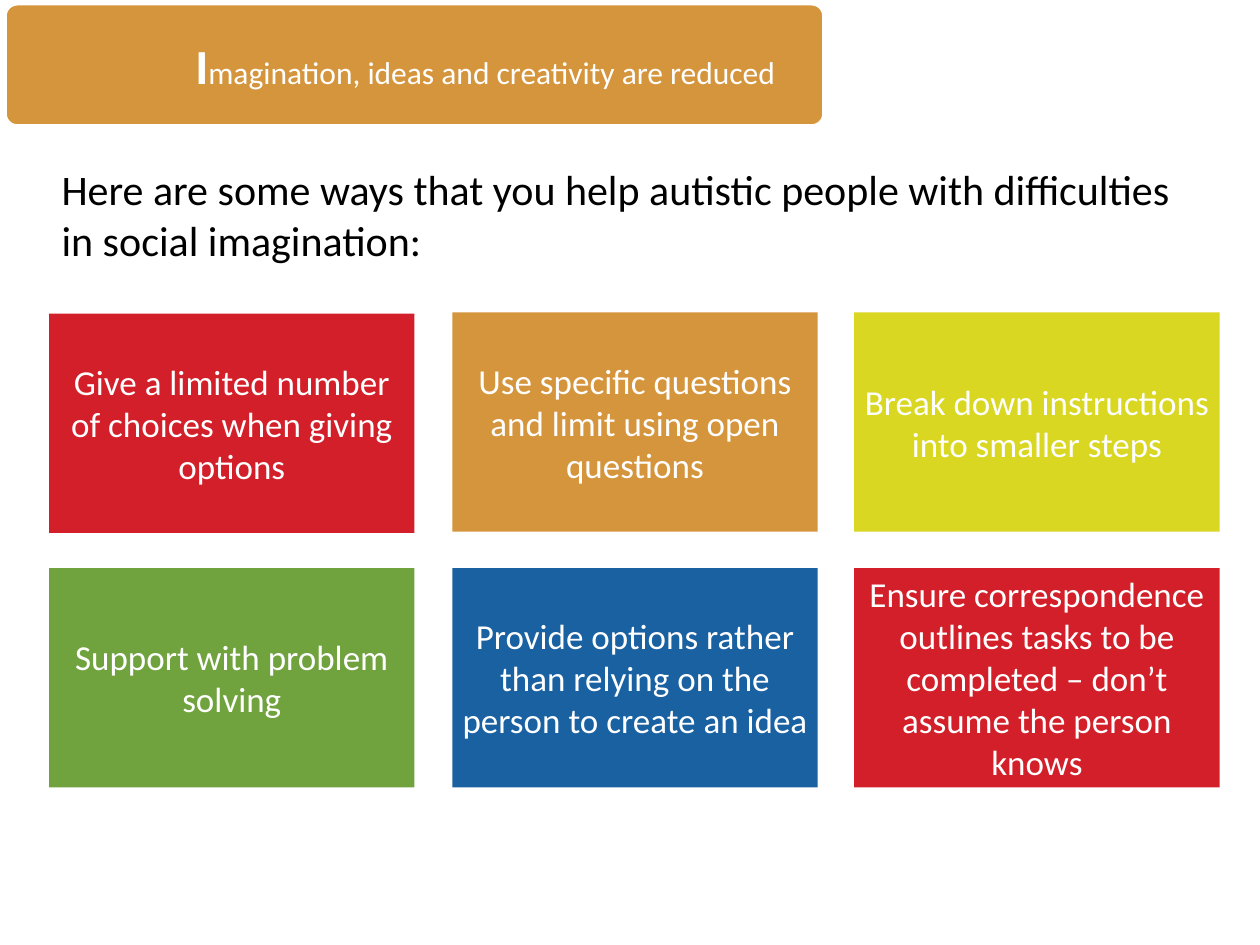
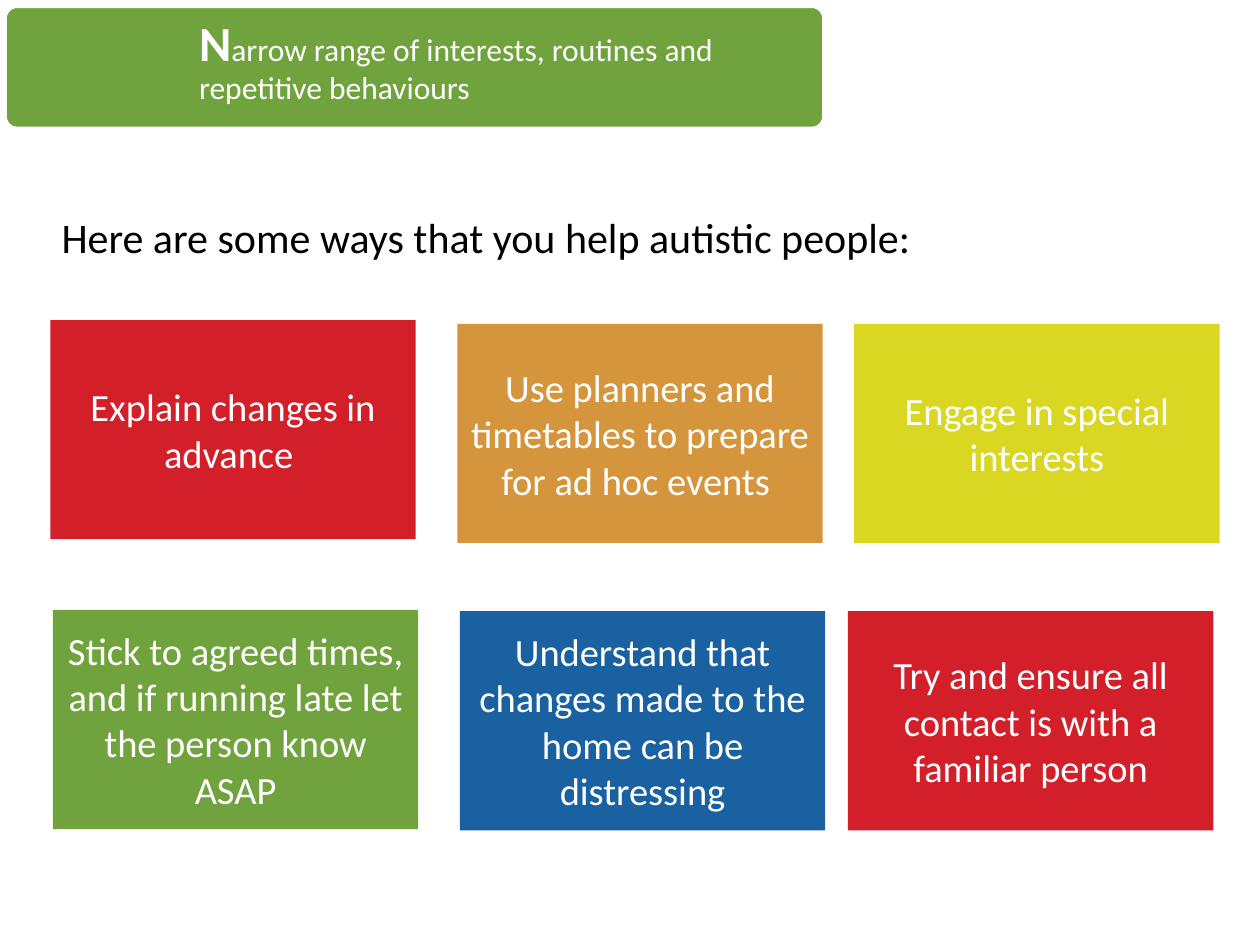
from dataclasses import dataclass

from pptx import Presentation
from pptx.dml.color import RGBColor
from pptx.enum.shapes import MSO_SHAPE as Shape
from pptx.enum.text import MSO_ANCHOR as Anchor, MSO_AUTO_SIZE as AutoSize, PP_ALIGN as Align
from pptx.util import Inches, Pt


@dataclass(frozen=True)
class Theme:
    font: str = "Calibri"
    red: str = "D31F29"
    orange: str = "D5953C"
    yellow: str = "D9D721"
    green: str = "70A33E"
    blue: str = "1A61A2"
    white: str = "FFFFFF"
    black: str = "000000"
    initial_size: int = 28
    title_size: int = 18
    intro_size: int = 24


THEME = Theme()
TILE_COLOURS = (THEME.red, THEME.orange, THEME.yellow,
                THEME.green, THEME.blue, THEME.red)
TILE_SIZE = (2.9, 1.74)
BAND_LEFT, BAND_SIZE = 0.04, (6.5, 0.97)

# Boxes are (left, top, width, height) in inches; tiles are (left, top, text).
SLIDES = [
    {
        "title": "Imagination, ideas and creativity are reduced",
        "title_box": (1.43, 0.03, 5.1, 0.97),
        "title_spacing": 1.0,
        "band_colour": THEME.orange,
        "intro": "Here are some ways that you help autistic people "
                 "with difficulties in social imagination:",
        "intro_box": (0.39, 1.25, 9.25, 0.91),
        "tile_text_size": 20,
        "tile_inset": 0.08,
        "tiles": [
            (0.39, 2.49, "Give a limited number of choices when giving options"),
            (3.59, 2.48, "Use specific questions and limit using open questions"),
            (6.78, 2.48, "Break down instructions into smaller steps"),
            (0.39, 4.51, "Support with problem solving"),
            (3.59, 4.51, "Provide options rather than relying on the person to create an idea"),
            (6.78, 4.51, "Ensure correspondence outlines tasks to be completed – "
                         "don’t assume the person knows"),
        ],
    },
    {
        "title": "Narrow range of interests, routines and repetitive behaviours",
        "title_box": (1.46, 0.05, 5.08, 0.89),
        "title_spacing": 0.9,
        "band_colour": THEME.green,
        "intro": "Here are some ways that you help autistic people:",
        "intro_box": (0.39, 1.63, 8.74, 0.5),
        "tile_text_size": 22,
        "tile_inset": 0.09,
        "tiles": [
            (0.4, 2.54, "Explain changes in advance "),
            (3.63, 2.57, "Use planners and timetables to prepare for ad hoc events "),
            (6.78, 2.57, "Engage in special interests"),
            (0.42, 4.84, "Stick to agreed times, and if running late let the person know ASAP"),
            (3.65, 4.85, "Understand that changes made to the home can be distressing"),
            (6.73, 4.85, "Try and ensure all contact is with a familiar person"),
        ],
    },
]


def write(shape, *spans, align=Align.LEFT, anchor=Anchor.MIDDLE, inset=None, spacing=None):
    """Fill a shape with one paragraph of (text, size, colour, bold) spans."""
    frame = shape.text_frame
    frame.word_wrap = True
    frame.auto_size = AutoSize.NONE
    frame.vertical_anchor = anchor
    if inset is not None:
        frame.margin_left = frame.margin_right = Inches(inset)
        frame.margin_top = frame.margin_bottom = Inches(inset)
    para = frame.paragraphs[0]
    para.alignment = align
    if spacing is not None:
        para.line_spacing = spacing
    for text, size, colour, bold in spans:
        span = para.add_run()
        span.text = text
        span.font.name = THEME.font
        span.font.size = Pt(size)
        span.font.bold = bold
        span.font.color.rgb = RGBColor.from_string(colour)


def add_block(slide, kind, box, colour):
    block = slide.shapes.add_shape(kind, *map(Inches, box))
    block.shadow.inherit = False
    block.fill.solid()
    block.fill.fore_color.rgb = RGBColor.from_string(colour)
    block.line.fill.background()
    return block


def add_title(slide, content):
    box = content["title_box"]
    band = add_block(slide, Shape.ROUNDED_RECTANGLE,
                     (BAND_LEFT, box[1], *BAND_SIZE), content["band_colour"])
    band.adjustments[0] = 0.1
    band.line.color.rgb = RGBColor.from_string(THEME.white)
    band.line.width = Pt(2)

    title = slide.shapes.title
    title.left, title.top, title.width, title.height = map(Inches, box)
    band.element.addnext(title.element)  # lift the title above its band
    text = content["title"]
    write(title, (text[0], THEME.initial_size, THEME.white, True),
          (text[1:], THEME.title_size, THEME.white, False),
          inset=0.12, spacing=content["title_spacing"])


def add_slide(deck, content):
    slide = deck.slides.add_slide(deck.slide_layouts.get_by_name("Title Only"))
    for (left, top, text), colour in zip(content["tiles"], TILE_COLOURS):
        tile = add_block(slide, Shape.RECTANGLE, (left, top, *TILE_SIZE), colour)
        write(tile, (text, content["tile_text_size"], THEME.white, False),
              align=Align.CENTER, inset=content["tile_inset"])
    intro = slide.shapes.add_textbox(*map(Inches, content["intro_box"]))
    write(intro, (content["intro"], THEME.intro_size, THEME.black, False), anchor=Anchor.TOP)
    add_title(slide, content)


def main():
    deck = Presentation()
    deck.slide_width, deck.slide_height = Inches(10), Inches(7.5)
    for content in SLIDES:
        add_slide(deck, content)
    deck.save("out.pptx")


if __name__ == "__main__":
    main()
